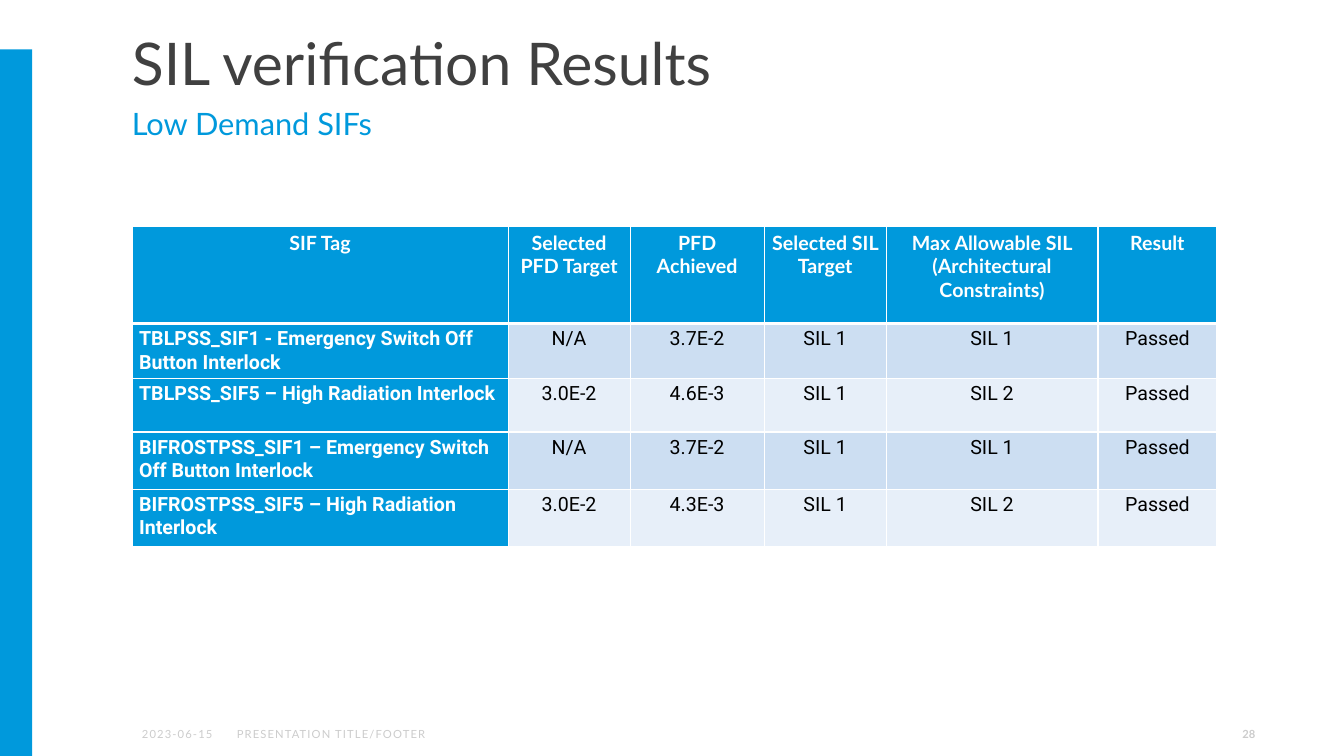
from lxml import etree
from pptx import Presentation
from pptx.dml.color import RGBColor
from pptx.enum.shapes import MSO_SHAPE
from pptx.enum.text import MSO_ANCHOR, PP_ALIGN
from pptx.oxml.ns import qn
from pptx.util import Inches, Pt

RECTANGLE = MSO_SHAPE.RECTANGLE
TOP, MIDDLE = MSO_ANCHOR.TOP, MSO_ANCHOR.MIDDLE
LEFT, CENTER, RIGHT = PP_ALIGN.LEFT, PP_ALIGN.CENTER, PP_ALIGN.RIGHT

COLORS = {
    "blue": "0099DC", "title": "404040", "footer": "CCCCCC", "white": "FFFFFF",
    "black": "000000", "band_dark": "CCDEF2", "band_light": "E7EFF9",
}


def style_paragraph(paragraph, size, color, bold=False, font="Lato", align=LEFT):
    paragraph.alignment = align
    paragraph.font.size = Pt(size)
    paragraph.font.name = font
    paragraph.font.bold = bold
    paragraph.font.color.rgb = RGBColor.from_string(COLORS[color])


def add_text(box, text, size, color, insets=(0.05, 0.05), anchor=TOP,
             spacing=None, **style):
    shape = slide.shapes.add_textbox(*[Inches(value) for value in box])
    frame = shape.text_frame
    frame.word_wrap = True
    frame.vertical_anchor = anchor
    frame.margin_top, frame.margin_bottom = [Inches(value) for value in insets]
    paragraph = frame.paragraphs[0]
    run = paragraph.add_run()
    run.text = text
    style_paragraph(paragraph, size, color, **style)
    if spacing:
        run.font._element.set("spc", str(spacing))
    return paragraph


presentation = Presentation()
presentation.slide_width = Inches(13.33)
presentation.slide_height = Inches(7.5)
slide = presentation.slides.add_slide(presentation.slide_layouts[6])

# Side bar
bar = slide.shapes.add_shape(RECTANGLE, Inches(0), Inches(0.49), Inches(0.32), Inches(7.01))
bar.shadow.inherit = False
bar.fill.solid()
bar.fill.fore_color.rgb = RGBColor.from_string(COLORS["blue"])
bar.line.fill.background()

# Title and subtitle
title = add_text((1.21, 0.29, 10.24, 0.72), "SIL verification Results", 42, "title",
                 insets=(0.05, 0.02))
title.line_spacing = 0.9
add_text((1.21, 1.02, 10.24, 0.55), "Low Demand SIFs", 22, "blue", insets=(0.02, 0.05))

# Footer
add_text((1.31, 7.08, 0.91, 0.4), "2023-06-15", 8, "footer", anchor=MIDDLE, spacing=80)
add_text((2.25, 7.08, 4.72, 0.4), "PRESENTATION TITLE/FOOTER", 8, "footer",
         anchor=MIDDLE, spacing=80)
add_text((9.55, 7.08, 3, 0.4), "28", 8, "footer", anchor=MIDDLE, bold=True, align=RIGHT)

# Results table
ROWS = [
    ["SIF Tag", "Selected PFD Target", "PFD Achieved", "Selected SIL Target",
     "Max Allowable SIL (Architectural Constraints)", "Result"],
    ["TBLPSS_SIF1 - Emergency Switch Off Button Interlock",
     "N/A", "3.7E-2", "SIL 1", "SIL 1", "Passed"],
    ["TBLPSS_SIF5 – High Radiation Interlock",
     "3.0E-2", "4.6E-3", "SIL 1", "SIL 2", "Passed"],
    ["BIFROSTPSS_SIF1 – Emergency Switch Off Button Interlock",
     "N/A", "3.7E-2", "SIL 1", "SIL 1", "Passed"],
    ["BIFROSTPSS_SIF5 – High Radiation Interlock",
     "3.0E-2", "4.3E-3", "SIL 1", "SIL 2", "Passed"],
]
COLUMN_WIDTHS = [3.73, 1.21, 1.33, 1.21, 2.1, 1.18]
ROW_HEIGHTS = [0.96, 0.53, 0.53, 0.57, 0.57]

table = slide.shapes.add_table(len(ROWS), len(COLUMN_WIDTHS), Inches(1.31), Inches(2.25),
                               Inches(sum(COLUMN_WIDTHS)), Inches(sum(ROW_HEIGHTS))).table
for column, width in zip(table.columns, COLUMN_WIDTHS):
    column.width = Inches(width)
for row, height in zip(table.rows, ROW_HEIGHTS):
    row.height = Inches(height)

for row_index, values in enumerate(ROWS):
    for column_index, text in enumerate(values):
        cell = table.cell(row_index, column_index)
        is_header = row_index == 0
        is_tag = column_index == 0
        is_blue = is_header or is_tag

        # Text
        cell.text = text
        cell.margin_left = cell.margin_right = Inches(0.07)
        cell.margin_top = cell.margin_bottom = Inches(0.04)
        paragraph = cell.text_frame.paragraphs[0]
        paragraph.space_after = Pt(6)
        style_paragraph(paragraph, 14, "white" if is_blue else "black", bold=is_blue,
                        font="Lato" if is_header else "Roboto",
                        align=LEFT if is_tag and not is_header else CENTER)

        # White borders, thicker under the header
        properties = cell._tc.get_or_add_tcPr()
        for side in ("lnL", "lnR", "lnT", "lnB"):
            is_thick = (row_index, side) in ((0, "lnB"), (1, "lnT"))
            line = etree.SubElement(properties, qn(f"a:{side}"), w=str(Pt(3 if is_thick else 1)))
            fill = etree.SubElement(line, qn("a:solidFill"))
            etree.SubElement(fill, qn("a:srgbClr"), val=COLORS["white"])

        # Fill
        band = "band_dark" if row_index % 2 else "band_light"
        cell.fill.solid()
        cell.fill.fore_color.rgb = RGBColor.from_string(COLORS["blue" if is_blue else band])

presentation.save("out.pptx")
